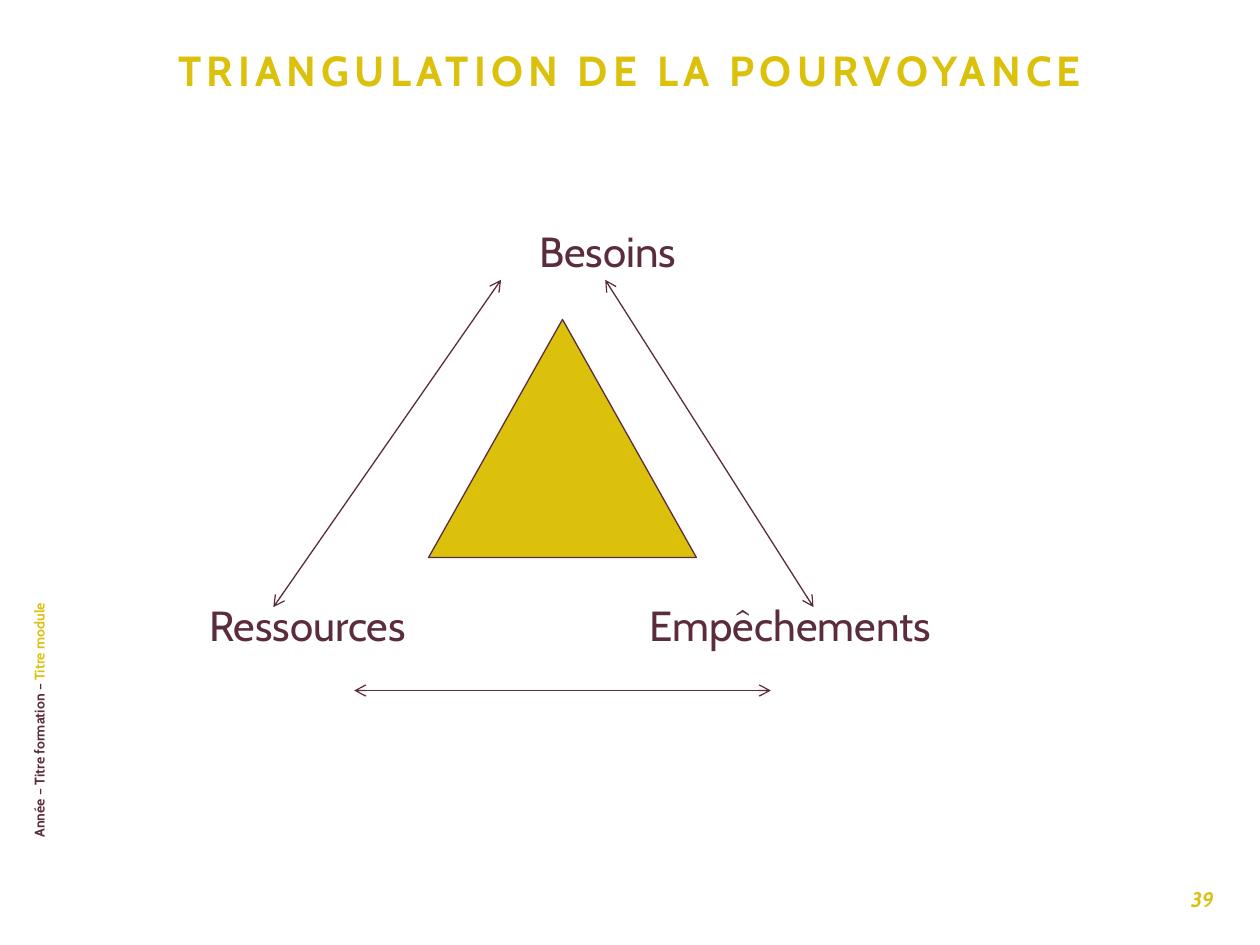
import pptx
import pptx.util
import pptx.dml.color
import pptx.enum.shapes
import pptx.enum.text
from dataclasses import dataclass
from lxml import etree
from pptx.oxml.ns import qn

Cm = pptx.util.Cm
Pt = pptx.util.Pt
Rgb = pptx.dml.color.RGBColor
Anchor = pptx.enum.text.MSO_ANCHOR
Align = pptx.enum.text.PP_ALIGN


@dataclass(frozen=True)
class Theme:
    gold: Rgb = Rgb(0xDB, 0xC1, 0x0C)
    plum: Rgb = Rgb(0x5B, 0x2C, 0x3E)
    face: str = "Cabin"
    large: int = 24
    page: int = 12
    small: int = 8
    line: float = 0.75


THEME = Theme()


def style(font, size, color, bold=False, italic=False):
    font.name = THEME.face
    font.size = Pt(size)
    font.color.rgb = color
    font.bold = bold
    font.italic = italic


def add_title(slide, text):
    title = slide.shapes.title
    title.left, title.top, title.width, title.height = Cm(1.27), Cm(0.76), Cm(22.86), Cm(3.18)
    frame = title.text_frame
    frame.text = text
    frame.auto_size = pptx.enum.text.MSO_AUTO_SIZE.NONE
    frame.vertical_anchor = Anchor.TOP
    para = frame.paragraphs[0]
    para.alignment = Align.CENTER
    style(para.font, THEME.large, THEME.gold, bold=True)
    para.runs[0].font._element.set("spc", "300")


def add_box(slide, left, top, width, height):
    box = slide.shapes.add_textbox(Cm(left), Cm(top), Cm(width), Cm(height))
    box.text_frame.word_wrap = True
    return box


def add_label(slide, text, left, top, width):
    frame = add_box(slide, left, top, width, 1.1).text_frame
    frame.margin_left = frame.margin_right = 0
    frame.margin_top = frame.margin_bottom = 0
    frame.text = text
    style(frame.paragraphs[0].font, THEME.large, THEME.plum)


def add_core(slide):
    kind = pptx.enum.shapes.MSO_SHAPE.ISOSCELES_TRIANGLE
    core = slide.shapes.add_shape(kind, Cm(8.64), Cm(6.44), Cm(5.4), Cm(4.8))
    core.shadow.inherit = False
    core.fill.solid()
    core.fill.fore_color.rgb = THEME.gold
    core.line.color.rgb = THEME.plum
    core.line.width = Pt(THEME.line)


def add_arrow(slide, start, end):
    kind = pptx.enum.shapes.MSO_CONNECTOR.STRAIGHT
    arrow = slide.shapes.add_connector(kind, *map(Cm, start + end))
    arrow.line.color.rgb = THEME.plum
    arrow.line.width = Pt(THEME.line)
    line = arrow.line._get_or_add_ln()
    for tag in ("a:headEnd", "a:tailEnd"):
        etree.SubElement(line, qn(tag)).set("type", "arrow")
    etree.SubElement(arrow._element.spPr, qn("a:effectLst"))


def add_side(slide):
    box = add_box(slide, -6.5, 9.53, 14.6, 0.61)
    box.rotation = 270
    para = box.text_frame.paragraphs[0]
    parts = (("Année – Titre formation – ", THEME.plum), ("Titre module", THEME.gold))
    for text, color in parts:
        run = para.add_run()
        run.text = text
        style(run.font, THEME.small, color, bold=True)


def add_page(slide, number):
    frame = add_box(slide, 23.39, 17.35, 1.7, 1.57).text_frame
    frame.vertical_anchor = Anchor.MIDDLE
    frame.text = number
    para = frame.paragraphs[0]
    para.alignment = Align.CENTER
    style(para.font, THEME.page, THEME.gold, bold=True, italic=True)


def main():
    deck = pptx.Presentation()
    deck.slide_width, deck.slide_height = Cm(25.4), Cm(19.05)
    slide = deck.slides.add_slide(deck.slide_layouts[5])
    add_title(slide, "TRIANGULATION DE LA POURVOYANCE")
    add_page(slide, "39")
    add_side(slide)
    add_label(slide, "Besoins", 10.87, 4.55, 4)
    add_label(slide, "Ressources", 4.22, 12.09, 5)
    add_label(slide, "Empêchements", 13.1, 12.09, 7)
    add_core(slide)
    add_arrow(slide, (12.2, 5.64), (16.4, 12.24))
    add_arrow(slide, (10.1, 5.64), (5.51, 12.24))
    add_arrow(slide, (7.14, 13.92), (15.54, 13.92))
    deck.save("out.pptx")


if __name__ == "__main__":
    main()
